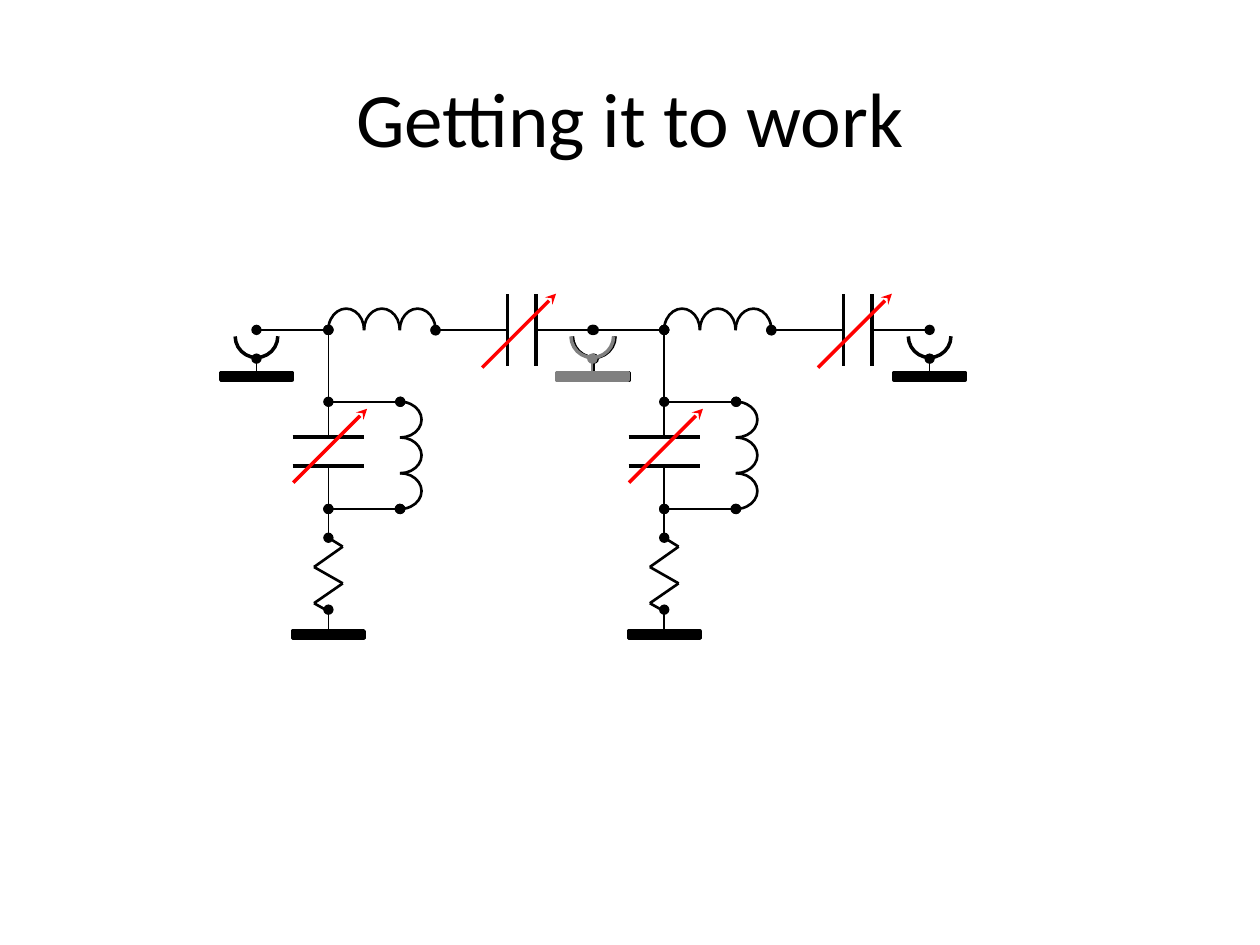
from lxml.etree import SubElement
from pptx import Presentation
from pptx.dml.color import RGBColor
from pptx.enum.shapes import MSO_CONNECTOR, MSO_SHAPE
from pptx.enum.text import MSO_ANCHOR, PP_ALIGN
from pptx.oxml.ns import qn
from pptx.util import Cm, Pt

BLACK = RGBColor(0x00, 0x00, 0x00)
GREY = RGBColor(0x80, 0x80, 0x80)
RED = RGBColor(0xFF, 0x00, 0x00)

# Circuit grid in cm; every stage is drawn around its top node
NODE_X, NODE_Y = 6.62, 6.65
STAGE_PITCH = 6.77
STEP = 1.45          # length of a lead
TURN = 0.72          # pitch of the coil turns
COIL_WIDTH = 0.86
PLATE = 0.72         # half length of a capacitor plate
BAR_HEIGHT = 0.15
OUTPUT_X = 5.35


def style_line(shape, color, width, head=None, tail=None):
    shape.line.color.rgb = color
    shape.line.width = Pt(width)
    outline = shape._element.spPr.find(qn("a:ln"))
    for tag, kind in (("a:headEnd", head), ("a:tailEnd", tail)):
        if kind:
            SubElement(outline, qn(tag), type=kind)


def add_wire(page, start, end, color=BLACK, width=1, head=None, tail=None):
    wire = page.shapes.add_connector(
        MSO_CONNECTOR.STRAIGHT, *(Cm(value) for value in (*start, *end)))
    style_line(wire, color, width, head, tail)
    SubElement(wire._element.spPr, qn("a:effectLst"))


def add_arc(page, center, width, height, rotation, end_angle,
            color=BLACK, line_width=1.5, head=None, tail=None):
    x, y = center
    arc = page.shapes.add_shape(MSO_SHAPE.ARC, Cm(x - width / 2), Cm(y - height / 2),
                                Cm(width), Cm(height))
    arc.adjustments[0] = 162.0
    arc.adjustments[1] = end_angle
    arc.rotation = rotation
    arc.shadow.inherit = False
    arc.fill.background()
    style_line(arc, color, line_width, head, tail)


def add_coil(page, x, y, vertical):
    """Three half turns, starting at the given point."""
    for turn in range(3):
        along = (turn + 0.5) * TURN
        center = (x, y + along) if vertical else (x + along, y)
        add_arc(page, center, COIL_WIDTH, TURN, 0 if vertical else 270, 54.86,
                head="oval" if turn == 0 else None,
                tail="oval" if turn == 2 else None)


def add_ground(page, x, top, bar_top, color=BLACK):
    bar = page.shapes.add_shape(MSO_SHAPE.RECTANGLE, Cm(x - PLATE), Cm(bar_top),
                                Cm(2 * PLATE), Cm(BAR_HEIGHT))
    bar.shadow.inherit = False
    bar.fill.solid()
    bar.fill.fore_color.rgb = color
    style_line(bar, color, 2)
    add_wire(page, (x, top), (x, bar_top), color, head="oval")


def add_jack(page, x, y, color=BLACK):
    add_arc(page, (x, y + 0.13), COIL_WIDTH, COIL_WIDTH, 90, 53.69, color, 2)
    add_ground(page, x, y + 0.58, y + 0.86, color)


def add_resistor(page, x, y):
    points = [(0, 0), (0.29, 0.18), (-0.29, 0.59), (0.29, 0.92), (-0.29, 1.32), (0.03, 1.5)]
    for (x1, y1), (x2, y2) in zip(points, points[1:]):
        add_wire(page, (x + x1, y + y1), (x + x2, y + y2), width=1.5)


def add_series_branch(page, x, y):
    add_wire(page, (x - STEP, y), (x, y), head="oval", tail="oval")
    add_coil(page, x, y, vertical=False)
    add_wire(page, (x + 3 * TURN, y), (x + 3.61, y), head="oval")
    for plate_x in (x + 3.61, x + 4.19):
        add_wire(page, (plate_x, y - PLATE), (plate_x, y + PLATE), width=2)
    add_wire(page, (x + 4.19, y), (x + OUTPUT_X, y), tail="oval")


def add_shunt_branch(page, x, y):
    top, bottom = y + STEP, y + STEP + 3 * TURN
    add_wire(page, (x, top), (x, y), tail="oval")
    # Coil in parallel with the capacitor
    for lead_y in (top, bottom):
        add_wire(page, (x, lead_y), (x + STEP, lead_y), head="oval", tail="oval")
    add_coil(page, x + STEP, top, vertical=True)
    add_wire(page, (x, top), (x, y + 2.16))
    for plate_y in (y + 2.16, y + 2.74):
        add_wire(page, (x - PLATE, plate_y), (x + PLATE, plate_y), width=2)
    add_wire(page, (x, y + 2.74), (x, bottom))
    # Resistor to ground
    add_wire(page, (x, y + 4.19), (x, bottom), head="oval", tail="oval")
    add_resistor(page, x, y + 4.19)
    add_ground(page, x, y + 5.64, y + 6.07)


def add_tuning_arrow(page, x, y):
    add_wire(page, (x, y), (x + 1.49, y - 1.49), RED, 2, tail="stealth")


def add_title(page, text):
    title = page.shapes.title
    title.left, title.top, title.width, title.height = Cm(1.27), Cm(0.76), Cm(22.86), Cm(3.18)
    frame = title.text_frame
    frame.text = text
    frame.vertical_anchor = MSO_ANCHOR.MIDDLE
    para = frame.paragraphs[0]
    para.alignment = PP_ALIGN.CENTER
    font = para.runs[0].font
    font.name, font.size = "Calibri", Pt(44)
    font.color.rgb = BLACK


def main():
    deck = Presentation()
    deck.slide_width, deck.slide_height = Cm(25.4), Cm(19.05)
    page = deck.slides.add_slide(deck.slide_layouts[5])
    add_title(page, "Getting it to work")

    # Two equal filter stages; the jack where they meet is greyed out
    stages = [(NODE_X, BLACK), (NODE_X + STAGE_PITCH, GREY)]
    for x, input_color in stages:
        add_series_branch(page, x, NODE_Y)
        add_shunt_branch(page, x, NODE_Y)
        add_jack(page, x - STEP, NODE_Y, input_color)
        add_jack(page, x + OUTPUT_X, NODE_Y)

    # Arrows mark the adjustable capacitors
    for x, _ in stages:
        add_tuning_arrow(page, x - 0.71, NODE_Y + 3.08)
        add_tuning_arrow(page, x + 3.1, NODE_Y + 0.76)

    deck.save("out.pptx")


if __name__ == "__main__":
    main()
